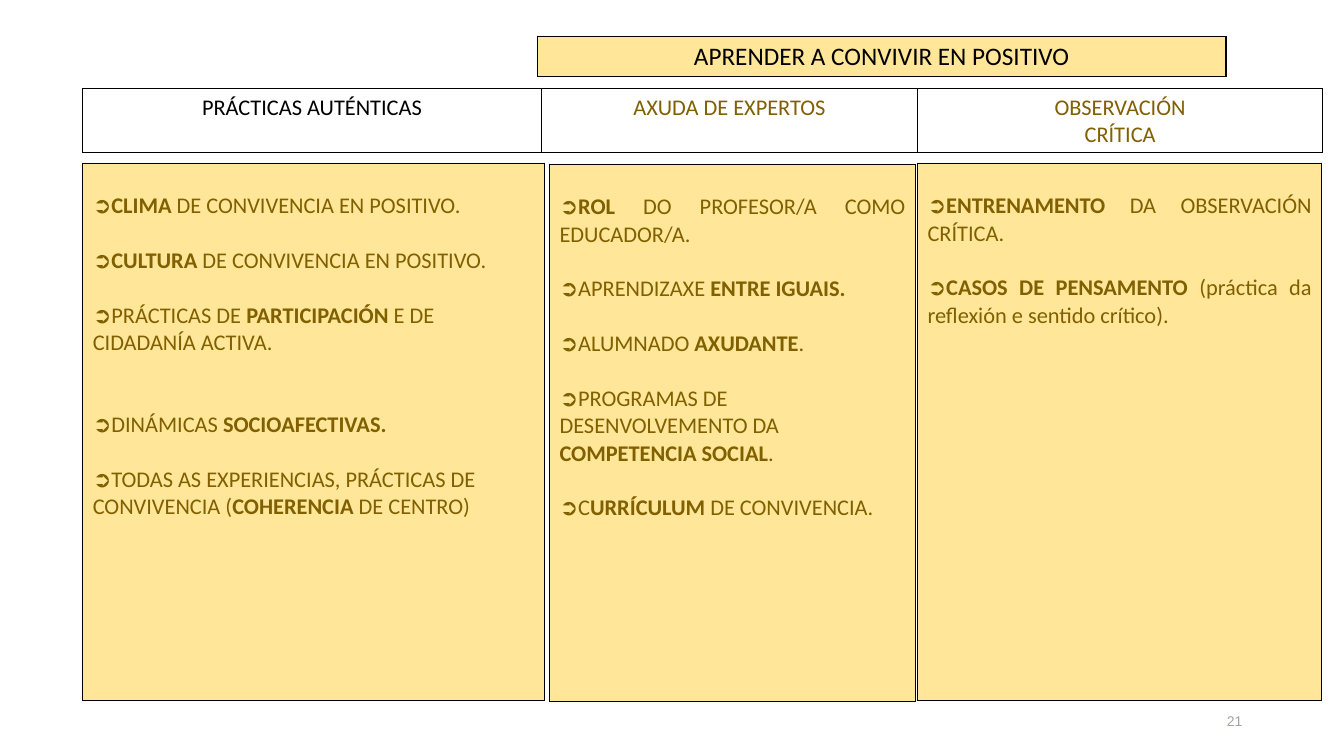
from dataclasses import dataclass

from lxml import etree
from pptx import Presentation
from pptx import util as u
from pptx.dml.color import RGBColor
from pptx.enum import text
from pptx.oxml import ns
from pptx.slide import Slide
from pptx.table import _Cell as Cell
from pptx.text.text import TextFrame

COLORS = {"black": "000000", "brown": "806000", "sand": "FFE699", "gray": "A7A399"}
LEFT, CENTER = text.PP_ALIGN.LEFT, text.PP_ALIGN.CENTER
RIGHT, JUSTIFY = text.PP_ALIGN.RIGHT, text.PP_ALIGN.JUSTIFY
LINE_GAP = 19.5
PLAIN_TABLE = {"first_row": False, "horz_banding": False}
LIST_TOP = 0.29


@dataclass
class Line:
    content: str
    align: text.PP_ALIGN = CENTER
    color: str = "brown"
    size: int = 16
    font: str = "Calibri"
    bullet: str = ""
    gap: float = 0


@dataclass
class Grid:
    left: float
    top: float
    height: float
    widths: list[float]
    cells: list[list[Line]]
    fill: str = ""
    margin_top: float = 0.05


def item(content: str, align: text.PP_ALIGN = LEFT, gap: float = LINE_GAP) -> Line:
    return Line(content, align, bullet="➲", gap=gap)


def apply(target: object, values: dict) -> None:
    for name, value in values.items():
        setattr(target, name, value)


def write_lines(frame: TextFrame, lines: list[Line]) -> None:
    for index, line in enumerate(lines):
        paragraph = frame.add_paragraph() if index else frame.paragraphs[0]
        apply(paragraph, {"alignment": line.align, "space_before": u.Pt(line.gap)})
        if line.bullet:
            properties = paragraph._p.get_or_add_pPr()
            properties.set("marL", "0")
            properties.set("indent", "0")
            etree.SubElement(properties, ns.qn("a:buFont")).set("typeface", line.font)
            etree.SubElement(properties, ns.qn("a:buChar")).set("char", line.bullet)
        for part, content in enumerate(line.content.split("*")):
            if content:
                run = paragraph.add_run()
                run.text = content
                apply(run.font, {"name": line.font, "size": u.Pt(line.size), "bold": part % 2 == 1})
                run.font.color.rgb = RGBColor.from_string(COLORS[line.color])


def draw_borders(cell: Cell) -> None:
    properties = cell._tc.get_or_add_tcPr()
    for side in ("a:lnL", "a:lnR", "a:lnT", "a:lnB"):
        border = etree.SubElement(properties, ns.qn(side))
        border.set("w", str(u.Pt(1)))
        solid = etree.SubElement(border, ns.qn("a:solidFill"))
        etree.SubElement(solid, ns.qn("a:srgbClr")).set("val", COLORS["black"])


def draw_grid(slide: Slide, grid: Grid) -> None:
    table = slide.shapes.add_table(
        1, len(grid.widths), u.Inches(grid.left), u.Inches(grid.top),
        u.Inches(sum(grid.widths)), u.Inches(grid.height),
    ).table
    apply(table, PLAIN_TABLE)
    margins = {
        "margin_left": u.Inches(0.1), "margin_right": u.Inches(0.1),
        "margin_top": u.Inches(grid.margin_top), "margin_bottom": u.Inches(0.05),
    }
    for index, (width, lines) in enumerate(zip(grid.widths, grid.cells)):
        table.columns[index].width = u.Inches(width)
        cell = table.cell(0, index)
        apply(cell, margins)
        draw_borders(cell)
        if grid.fill:
            cell.fill.solid()
            cell.fill.fore_color.rgb = RGBColor.from_string(COLORS[grid.fill])
        else:
            cell.fill.background()
        write_lines(cell.text_frame, lines)


def draw_page_number(slide: Slide, number: str) -> None:
    box = slide.shapes.add_textbox(u.Inches(9.42), u.Inches(6.95), u.Inches(3), u.Inches(0.4))
    apply(box.text_frame, {"word_wrap": True, "vertical_anchor": text.MSO_ANCHOR.MIDDLE})
    write_lines(box.text_frame, [Line(number, RIGHT, "gray", 10, "Arial")])


PRACTICES = [
    item("*CLIMA* DE CONVIVENCIA EN POSITIVO.", gap=0),
    item("*CULTURA *DE CONVIVENCIA EN POSITIVO."),
    item("PRÁCTICAS DE *PARTICIPACIÓN* E DE CIDADANÍA ACTIVA."),
    item("DINÁMICAS *SOCIOAFECTIVAS.*", gap=2 * LINE_GAP),
    item("TODAS AS EXPERIENCIAS, PRÁCTICAS DE CONVIVENCIA (*COHERENCIA* DE CENTRO)"),
]
EXPERTS = [
    item("*ROL *DO PROFESOR/A COMO EDUCADOR/A.", JUSTIFY, 0),
    item("APRENDIZAXE *ENTRE IGUAIS.*", JUSTIFY),
    item("ALUMNADO *AXUDANTE*.", JUSTIFY),
    item("PROGRAMAS DE DESENVOLVEMENTO DA *COMPETENCIA SOCIAL*."),
    item("C*URRÍCULUM* DE CONVIVENCIA."),
]
OBSERVATION = [
    item("*ENTRENAMENTO* DA OBSERVACIÓN CRÍTICA.", JUSTIFY, 0),
    item("*CASOS DE PENSAMENTO *(práctica da reflexión e sentido crítico).", JUSTIFY),
]
HEADINGS = [
    [Line("PRÁCTICAS AUTÉNTICAS", color="black")],
    [Line("AXUDA DE EXPERTOS")],
    [Line("OBSERVACIÓN"), Line("CRÍTICA")],
]
GRIDS = [
    Grid(5.33, 0.36, 0.4, [6.83], [[Line("APRENDER A CONVIVIR EN POSITIVO", color="black", size=18)]], "sand"),
    Grid(0.82, 0.88, 0.63, [4.55, 3.73, 4.02], HEADINGS),
    Grid(0.82, 1.62, 5.33, [4.58], [PRACTICES], "sand", LIST_TOP),
    Grid(5.45, 1.63, 5.33, [3.63], [EXPERTS], "sand", LIST_TOP),
    Grid(9.1, 1.62, 5.33, [4.01], [OBSERVATION], "sand", LIST_TOP),
]


def main() -> None:
    presentation = Presentation()
    apply(presentation, {"slide_width": u.Inches(13.33), "slide_height": u.Inches(7.5)})
    slide = presentation.slides.add_slide(presentation.slide_layouts[6])
    draw_page_number(slide, "21")
    for grid in GRIDS:
        draw_grid(slide, grid)
    presentation.save("out.pptx")


if __name__ == "__main__":
    main()
